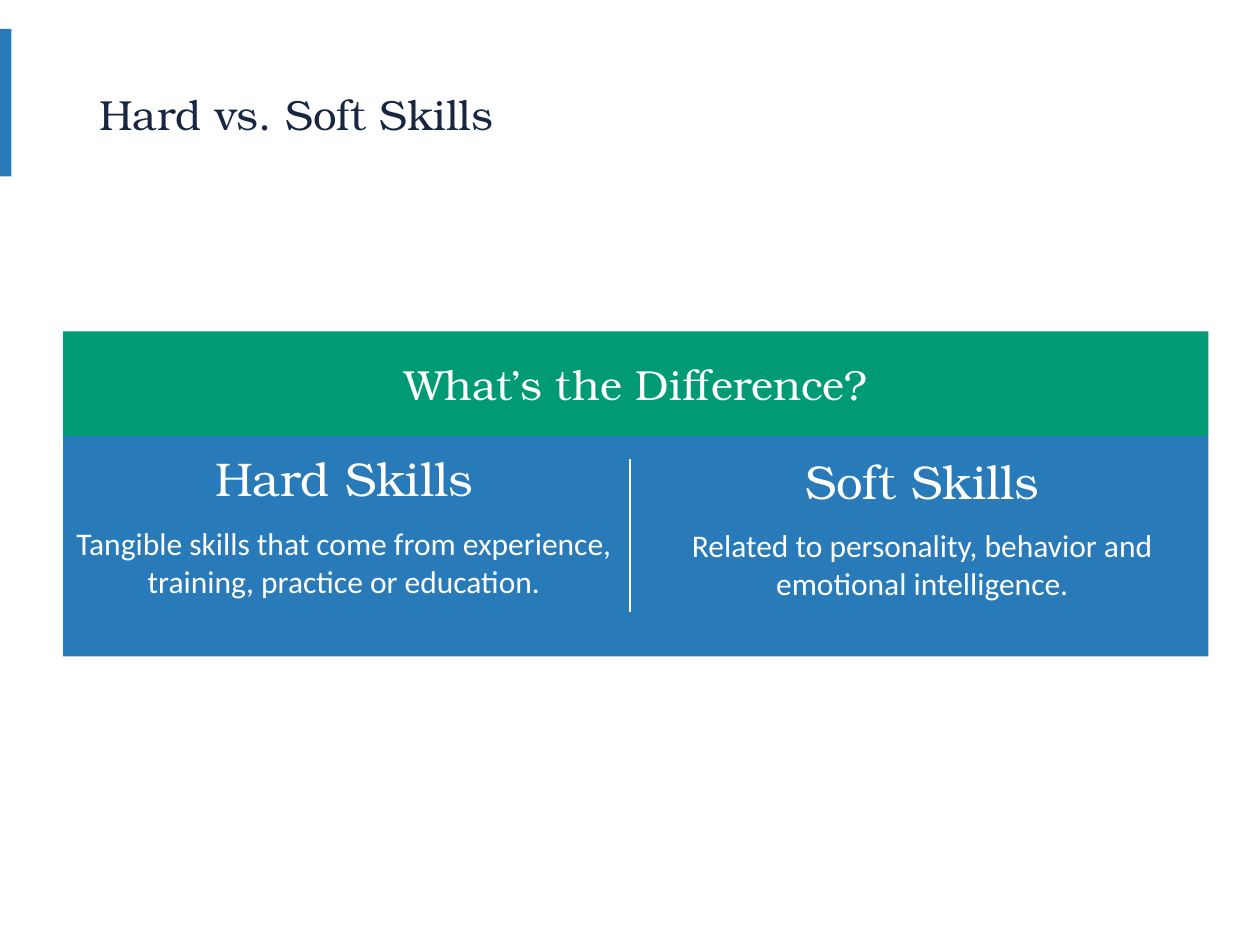
from lxml import etree
from pptx import Presentation
from pptx.dml.color import RGBColor
from pptx.enum.shapes import MSO_CONNECTOR, MSO_SHAPE
from pptx.enum.text import MSO_ANCHOR, PP_ALIGN
from pptx.oxml.ns import qn
from pptx.util import Inches, Pt

RECT = MSO_SHAPE.RECTANGLE
LINE = MSO_CONNECTOR.STRAIGHT
TOP, MIDDLE = MSO_ANCHOR.TOP, MSO_ANCHOR.MIDDLE
LEFT, CENTER = PP_ALIGN.LEFT, PP_ALIGN.CENTER
SERIF, SANS = "TeX Gyre Bonum", "Calibri"
COLORS = {"navy": "182642", "blue": "287AB9", "green": "009B74", "white": "FFFFFF"}


def color(name):
    return RGBColor.from_string(COLORS[name])


def style(para, text, face, size, tint, align):
    para.text = text
    para.alignment = align
    para.font.name = face
    para.font.size = Pt(size)
    para.font.color.rgb = color(tint)


def add_block(slide, x, y, w, h, fill):
    block = slide.shapes.add_shape(RECT, Inches(x), Inches(y), Inches(w), Inches(h))
    block.shadow.inherit = False
    block.fill.solid()
    block.fill.fore_color.rgb = color(fill)
    block.line.fill.background()
    return block


def add_box(slide, x, y, w, h, anchor):
    box = slide.shapes.add_textbox(Inches(x), Inches(y), Inches(w), Inches(h))
    frame = box.text_frame
    frame.word_wrap = True
    frame.vertical_anchor = anchor
    return frame


def add_title(slide, text):
    para = add_box(slide, 0.69, 0.4, 8.62, 1.06, MIDDLE).paragraphs[0]
    style(para, text, SERIF, 24, "navy", LEFT)
    para.line_spacing = 0.9


def add_skill(slide, x, y, head, body):
    """Add a heading with its description below."""
    frame = add_box(slide, x, y, 4.62, 1.3, TOP)
    style(frame.paragraphs[0], head, SERIF, 27, "white", CENTER)
    para = frame.add_paragraph()
    style(para, body, SANS, 18, "white", CENTER)
    para.space_before = Pt(10)


def add_rule(slide, x, top, bottom):
    rule = slide.shapes.add_connector(LINE, Inches(x), Inches(top), Inches(x), Inches(bottom))
    rule.line.color.rgb = color("white")
    rule.line.width = Pt(1)
    etree.SubElement(rule._element.spPr, qn("a:effectLst"))


def main():
    deck = Presentation()
    deck.slide_width, deck.slide_height = Inches(10), Inches(7.5)
    slide = deck.slides.add_slide(deck.slide_layouts[6])

    add_block(slide, 0, 0.23, 0.09, 1.17, "blue")
    add_title(slide, "Hard vs. Soft Skills")

    add_block(slide, 0.5, 3.46, 9.09, 1.75, "blue")
    banner = add_block(slide, 0.5, 2.63, 9.09, 0.83, "green").text_frame
    banner.vertical_anchor = MIDDLE
    style(banner.paragraphs[0], "What’s the Difference?", SERIF, 24, "white", CENTER)

    add_rule(slide, 5, 3.64, 4.86)
    add_skill(slide, 0.42, 3.52, "Hard Skills",
              "Tangible skills that come from experience, training, practice or education.")
    add_skill(slide, 5.01, 3.54, "Soft Skills",
              "Related to personality, behavior and emotional intelligence.")
    deck.save("out.pptx")


if __name__ == "__main__":
    main()
